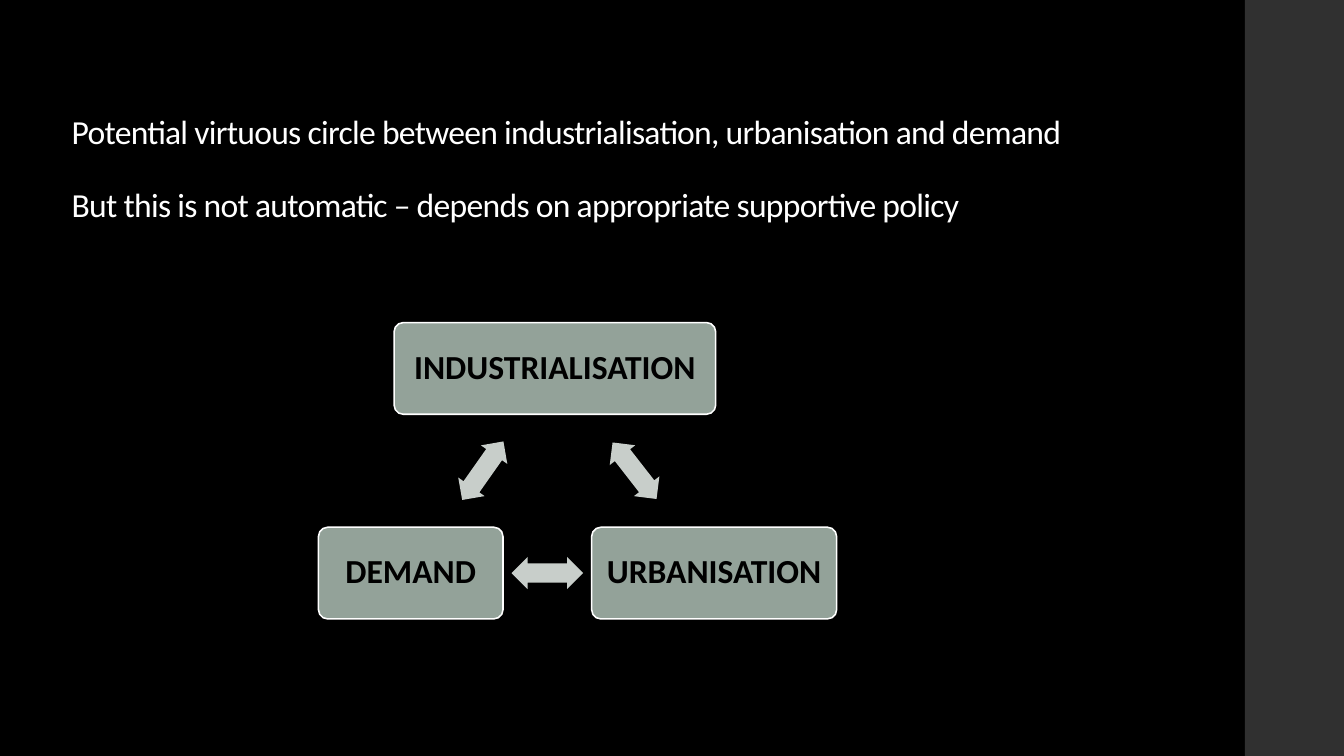
from math import atan2, degrees

from pptx import Presentation
from pptx.dml.color import RGBColor
from pptx.enum.shapes import MSO_SHAPE as Shape
from pptx.enum.text import MSO_ANCHOR as Anchor, MSO_AUTO_SIZE as AutoSize, PP_ALIGN as Align
from pptx.util import Inches, Pt

WIDTH, HEIGHT = Inches(13.33), Inches(7.5)
COLUMN, ROW = WIDTH / 100, HEIGHT / 100
BLACK, WHITE = "000000", "FFFFFF"
BAND, SAGE, PALE = "303030", "93A299", "C8CECA"
TOP_ROW, BOTTOM_ROW = 48.73, 75.8
BOX_HEIGHT = 12.13
TITLE = (
    "Potential virtuous circle between industrialisation, urbanisation and demand",
    "But this is not automatic – depends on appropriate supportive policy",
)


def paint(target, color):
    if hasattr(target, "solid"):
        target.solid()
        target = target.fore_color
    target.rgb = RGBColor.from_string(color)


def place(columns, rows, width, height):
    return (round(columns * COLUMN), round(rows * ROW),
            round(width * COLUMN), round(height * ROW))


def write(para, text, color=BLACK, bold=False, align=Align.CENTER, before=0, tracking=0):
    para.alignment = align
    para.line_spacing = 0.9
    para.space_before = Pt(before)
    span = para.add_run()
    span.text = text
    span.font.name = "Calibri"
    span.font.size = Pt(24)
    span.font.bold = bold
    paint(span.font.color, color)
    if tracking:
        span.font._element.set("spc", str(round(tracking * 100)))


def add_block(page, kind, area, color, outline=None):
    block = page.shapes.add_shape(kind, *place(*area))
    block.shadow.inherit = False
    paint(block.fill, color)
    if outline:
        paint(block.line.fill, outline)
        block.line.width = Pt(1.1)
    else:
        block.line.fill.background()
    return block


def add_box(page, text, center, row, width):
    area = (center - width / 2, row - BOX_HEIGHT / 2, width, BOX_HEIGHT)
    box = add_block(page, Shape.ROUNDED_RECTANGLE, area, SAGE, WHITE)
    box.adjustments[0] = 0.1
    frame = box.text_frame
    frame.word_wrap = True
    frame.vertical_anchor = Anchor.MIDDLE
    write(frame.paragraphs[0], text, bold=True)
    return box


def add_arrow(page, start, end):
    across = end.left + end.width / 2 - start.left - start.width / 2
    down = end.top - start.top
    if down:
        middle = start.left + start.width / 2 + across / 2
    else:
        middle = (start.left + start.width + end.left) / 2
    center_row = (start.top + end.top + start.height) / 2 / ROW
    width, height = 5.33, 4.27
    area = (middle / COLUMN - width / 2, center_row - height / 2, width, height)
    arrow = add_block(page, Shape.LEFT_RIGHT_ARROW, area, PALE)
    arrow.adjustments[0] = 0.6
    arrow.adjustments[1] = 0.5
    arrow.rotation = degrees(atan2(down, across)) % 360


def add_title(page):
    title = page.shapes.title
    title.left, title.top, title.width, title.height = place(4.58, 4.13, 84.92, 26.27)
    frame = title.text_frame
    frame.word_wrap = True
    frame.auto_size = AutoSize.NONE
    frame.vertical_anchor = Anchor.BOTTOM
    for index, text in enumerate(TITLE):
        para = frame.add_paragraph() if index else frame.paragraphs[0]
        write(para, text, WHITE, align=Align.LEFT, before=26 * index, tracking=-0.5)


def main():
    deck = Presentation()
    deck.slide_width, deck.slide_height = WIDTH, HEIGHT
    page = deck.slides.add_slide(deck.slide_layouts[5])
    paint(page.background.fill, BLACK)
    add_block(page, Shape.RECTANGLE, (92.63, 0, 7.37, 100), BAND)
    add_title(page)
    industry = add_box(page, "INDUSTRIALISATION", 41.29, TOP_ROW, 23.93)
    cities = add_box(page, "URBANISATION", 53.14, BOTTOM_ROW, 18.23)
    demand = add_box(page, "DEMAND", 30.56, BOTTOM_ROW, 13.73)
    for start, end in ((industry, cities), (demand, cities), (demand, industry)):
        add_arrow(page, start, end)
    deck.save("out.pptx")


if __name__ == "__main__":
    main()
